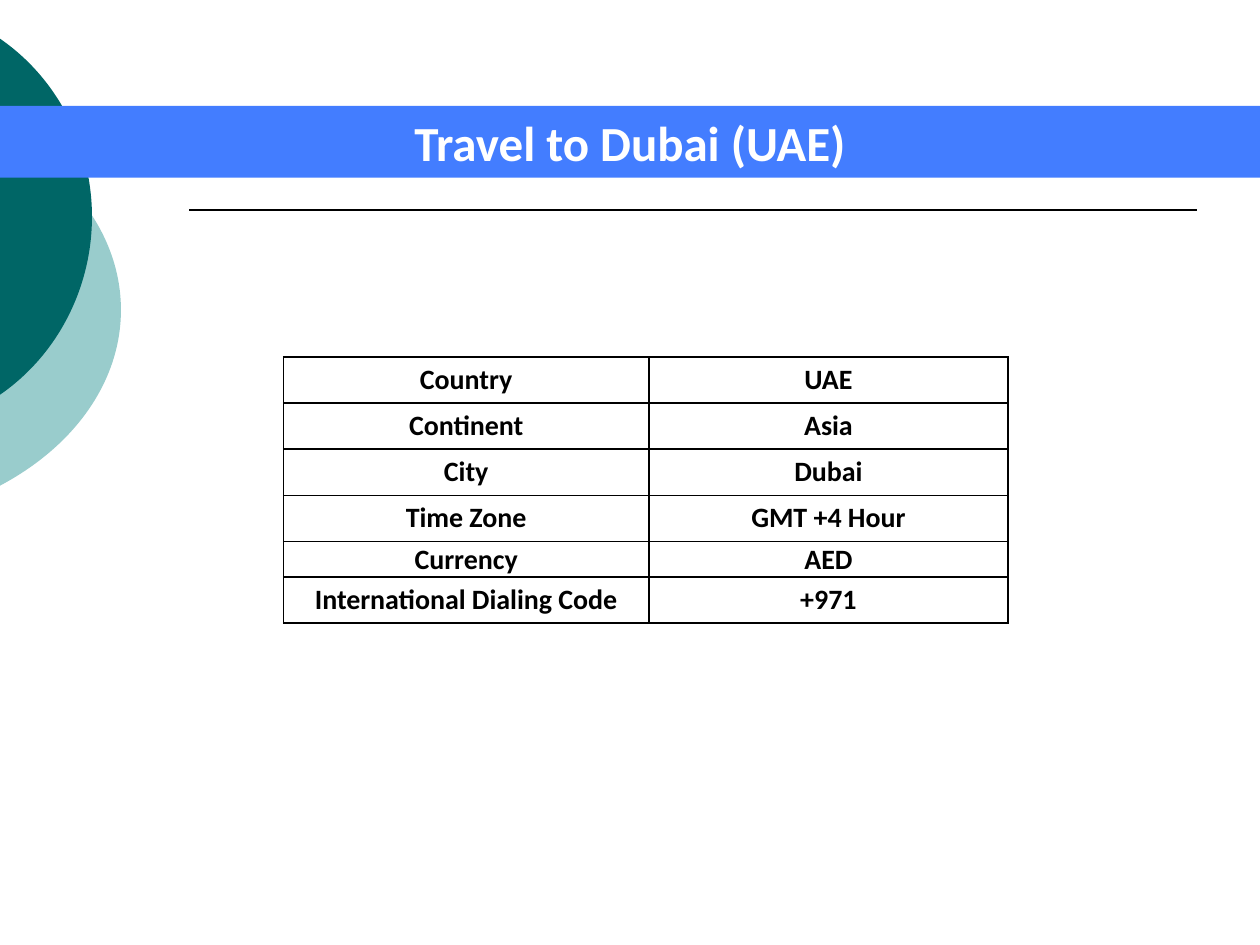
from pptx import Presentation
from pptx.util import Inches, Pt
from pptx.dml.color import RGBColor
from pptx.enum.shapes import MSO_CONNECTOR as CONN, MSO_SHAPE as SHAPE
from pptx.enum.text import MSO_ANCHOR as ANCHOR, PP_ALIGN as ALIGN
from pptx.oxml.ns import qn
from lxml.etree import SubElement

FONT, BLACK = "Calibri", "000000"


def rgb(color):
    return RGBColor.from_string(color)


def style(p, size, color):
    p.alignment = ALIGN.CENTER
    p.font.name, p.font.size, p.font.bold = FONT, Pt(size), True
    p.font.color.rgb = rgb(color)


prs = Presentation()
prs.slide_width, prs.slide_height = Inches(10), Inches(7.5)
W, H = prs.slide_width, prs.slide_height
s = prs.slides.add_slide(prs.slide_layouts[6])

# Circles cut off at the left edge: frame, upper curve down to the middle, colour
segments = [
    ((-3.54, 0.75, 4.5, 3.42), [(-0.01, 1.06), (0.6, 1.38), (0.96, 1.9), (0.96, 2.46)], "99CCCC"),
    ((-2.65, 0, 3.38, 3.45), [(-0.01, 0.3), (0.46, 0.62), (0.73, 1.16), (0.73, 1.72)], "006666"),
]
for (left, top, width, height), upper, color in segments:
    x, y, w, h = (Inches(v) for v in (left, top, width, height))
    builder = s.shapes.build_freeform(x, y)
    builder.add_line_segments([(x + w, y), (x + w, y + h), (x, y + h)])
    sp = builder.convert_to_shape()

    # The lower curve mirrors the upper one
    middle = upper[-1][1]
    lower = [(px, 2 * middle - py) for px, py in reversed(upper[:-1])]
    curve = next(sp._element.iter(qn("a:path")))
    for child in list(curve):
        curve.remove(child)
    for tag, points in (("moveTo", upper[:1]), ("cubicBezTo", upper[1:]),
                        ("cubicBezTo", lower), ("close", [])):
        step = SubElement(curve, qn("a:" + tag))
        for px, py in points:
            SubElement(step, qn("a:pt"), x=str(Inches(px - left)), y=str(Inches(py - top)))
    sp.shadow.inherit = False
    sp.fill.solid()
    sp.fill.fore_color.rgb = rgb(color)
    sp.line.fill.background()

# Rule under the title
rule = s.shapes.add_connector(CONN.STRAIGHT, int(W * 0.15), H * 2 // 9,
                              int(W * 0.95), H * 2 // 9)
rule.line.color.rgb = rgb(BLACK)
rule.line.width = Pt(1)
SubElement(rule._element.spPr, qn("a:effectLst"))

# Title band
band = s.shapes.add_shape(SHAPE.RECTANGLE, 0, Inches(0.84), W, Inches(0.57))
band.shadow.inherit = False
band.fill.solid()
band.fill.fore_color.rgb = rgb("437DFF")
band.line.fill.background()
tf = band.text_frame
tf.vertical_anchor = ANCHOR.MIDDLE
tf.text = "Travel to Dubai (UAE)"
style(tf.paragraphs[0], 28, "FFFFFF")

# Table of facts
facts = [
    ("Country", "UAE"),
    ("Continent", "Asia"),
    ("City", "Dubai"),
    ("Time Zone", "GMT +4 Hour"),
    ("Currency", "AED"),
    ("International Dialing Code", "+971"),
]
ROW = 0.27
table = s.shapes.add_table(len(facts), 2, int(W * 0.225), H * 17 // 45,
                           int(W * 0.575), Inches(ROW * len(facts))).table
table.first_row = table.horz_banding = False
for column, width in zip(table.columns, (2.9, 2.85)):
    column.width = Inches(width)
for r, fact in enumerate(facts):
    table.rows[r].height = Inches(ROW)
    for c, text in enumerate(fact):
        cell = table.cell(r, c)
        cell.text = text
        cell.vertical_anchor = ANCHOR.MIDDLE
        style(cell.text_frame.paragraphs[0], 16, BLACK)
        if fact[0] == "Currency":
            cell.margin_left = cell.margin_right = cell.margin_top = Inches(0.01)
            cell.margin_bottom = 0
        else:
            cell.margin_top = cell.margin_bottom = Pt(3.4)
        for side in ("lnL", "lnR", "lnT", "lnB"):
            ln = SubElement(cell._tc.get_or_add_tcPr(), qn("a:" + side), w=str(Pt(1)))
            SubElement(SubElement(ln, qn("a:solidFill")), qn("a:srgbClr"), val=BLACK)
        cell.fill.background()

prs.save("out.pptx")
